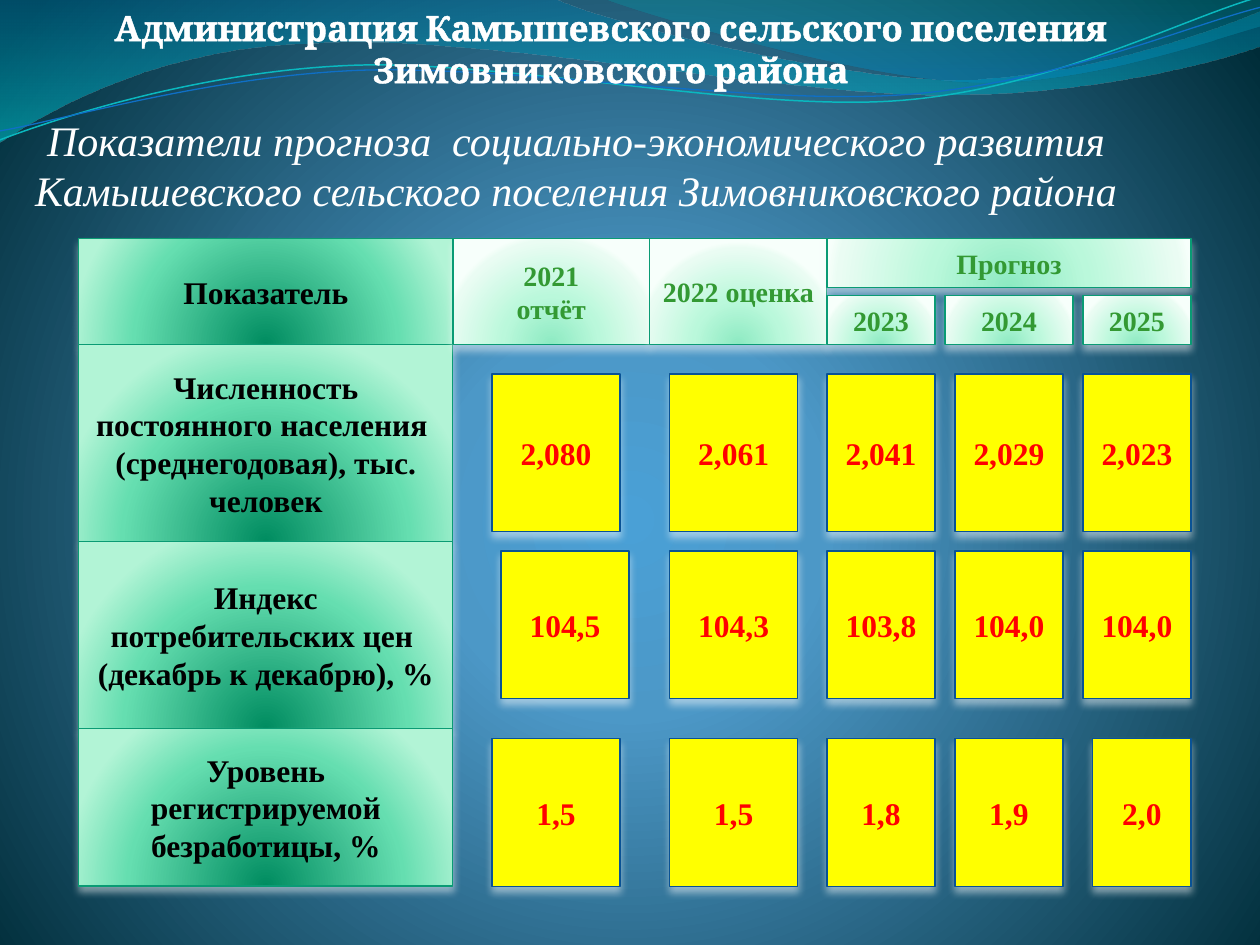
from lxml import etree
from pptx import Presentation
from pptx.dml.color import RGBColor
from pptx.enum import shapes, text
from pptx.oxml import ns
from pptx.util import Cm, Pt

WHITE = RGBColor(0xFF, 0xFF, 0xFF)
BLACK = RGBColor(0, 0, 0)
RED = RGBColor(0xFF, 0, 0)
YELLOW = RGBColor(0xFF, 0xFF, 0)
GREEN = RGBColor(0x33, 0x99, 0x33)
EDGE = RGBColor(0x0A, 0x9B, 0x74)
NAVY = RGBColor(0x09, 0x52, 0x95)
AQUA = RGBColor(0x0A, 0xB8, 0xBF)
BLUE = RGBColor(0x0F, 0x6F, 0xC6)
# Gradient stops: position, colour, opacity (all in percent)
SKY = [(0, RGBColor(0x4A, 0xA0, 0xD6), 100), (25, RGBColor(0x4C, 0x98, 0xC7), 100),
       (100, RGBColor(0, 0x2C, 0x38), 100)]
DEEP = [(0, RGBColor(0, 0x8C, 0x60), 100), (68, RGBColor(0x65, 0xDE, 0xB0), 100),
        (100, RGBColor(0xB2, 0xF4, 0xD6), 100)]
PALE = [(0, RGBColor(0x8D, 0xEA, 0xC2), 100), (43, RGBColor(0xBA, 0xF8, 0xDB), 100),
        (93, RGBColor(0xEA, 0xFC, 0xF3), 100), (100, RGBColor(0xF7, 0xFF, 0xFB), 100)]
SEA = [(0, RGBColor(0, 0x74, 0xA1), 45), (100, RGBColor(0, 0xC6, 0xCF), 55)]
FOAM = [(0, RGBColor(0, 0xA1, 0xA9), 30), (80, RGBColor(0, 0x8B, 0xBF), 45)]
SERIF = "Times New Roman"


def blend(props, stops, focus=None):
    """Swap the solid fill for a gradient, radial if a focus is given."""
    marks = "".join(
        f'<a:gs pos="{pos * 1000}"><a:srgbClr val="{tint}">'
        f'<a:alpha val="{part * 1000}"/></a:srgbClr></a:gs>'
        for pos, tint, part in stops)
    way = '<a:lin ang="5400000" scaled="0"/>'
    if focus:
        left, top, right, bottom = (n * 1000 for n in focus)
        way = (f'<a:path path="circle"><a:fillToRect l="{left}" t="{top}" '
               f'r="{right}" b="{bottom}"/></a:path>')
    grad = etree.fromstring(f'<a:gradFill {ns.nsdecls("a")} rotWithShape="1">'
                            f'<a:gsLst>{marks}</a:gsLst>{way}</a:gradFill>')
    props.replace(props.find(ns.qn("a:solidFill")), grad)


def box(x, y, w, h, words, fill, edge, size, ink):
    """Draw a bordered cell with a soft light shadow and bold centred text."""
    cell = slide.shapes.add_shape(shapes.MSO_SHAPE.RECTANGLE, Cm(x), Cm(y), Cm(w), Cm(h))
    cell.fill.solid()
    if isinstance(fill, list):
        blend(cell._element.spPr, fill, (50, 130, 50, -30))
    else:
        cell.fill.fore_color.rgb = fill
    cell.line.color.rgb = edge
    cell.line.width = Pt(0.75)
    cell._element.spPr.append(etree.fromstring(
        f'<a:effectLst {ns.nsdecls("a")}><a:outerShdw blurRad="{Pt(4.5)}" '
        f'dist="{Pt(3)}" dir="5400000" rotWithShape="0"><a:srgbClr val="{WHITE}">'
        '<a:alpha val="48000"/></a:srgbClr></a:outerShdw></a:effectLst>'))
    frame = cell.text_frame
    frame.text = words
    frame.word_wrap = True
    frame.vertical_anchor = text.MSO_ANCHOR.MIDDLE
    for par in frame.paragraphs:
        par.alignment = text.PP_ALIGN.CENTER
        par.font.name, par.font.size, par.font.bold = SERIF, Pt(size), True
        par.font.color.rgb = ink


deck = Presentation()
deck.slide_width, deck.slide_height = Cm(25.4), Cm(19.05)
slide = deck.slides.add_slide(deck.slide_layouts[5])

# Background
slide.background.fill.solid()
blend(slide.element.find(".//" + ns.qn("p:bgPr")), SKY, (10, 110, 10, 100))

# Waves: a start point, then lines (2 numbers) and Bezier curves (6 numbers), in cm
waves = [
    ([(0, 0), (11.18, -0.03), (12.09, 0.43, 16.87, 1.6, 19.25, 1.6),
      (21.67, 1.6, 24.33, 0.66, 25.4, 0.23), (25.43, 0.91),
      (24.97, 1.12, 22.1, 1.93, 18.95, 1.91), (15.8, 1.91, 9.7, 0.71, 6.53, 0.86),
      (3.28, 0.91, 1.17, 2.11, -0.03, 2.87)], SEA, None, 0),
    ([(12.17, -0.03), (12.93, 0.28, 17.32, 1.57, 19.53, 1.65),
      (21.74, 1.75, 24.41, 0.81, 25.4, 0.53), (25.4, 0)], FOAM, None, 0),
    ([(0, 2.82), (1.22, 2.36, 4.01, 1.45, 7.04, 1.32),
      (10.03, 1.19, 15.06, 2.26, 18.11, 2.03),
      (21.16, 1.8, 23.83, 0.38, 25.35, -0.05)], None, AQUA, 0.85),
    ([(0, 2.64), (1.19, 2.44, 4.17, 1.55, 7.19, 1.42),
      (10.24, 1.3, 15.16, 2.13, 18.21, 1.91),
      (21.23, 1.7, 23.9, 0.53, 25.4, 0.15)], None, BLUE, 0.75),
]
for (start, *parts), stops, tint, width in waves:
    pts = [(Cm(part[i]), Cm(part[i + 1])) for part in parts
           for i in range(0, len(part), 2)]
    path = slide.shapes.build_freeform(Cm(start[0]), Cm(start[1]))
    path.add_line_segments(pts, close=bool(stops))
    wave = path.convert_to_shape()
    # Join each three control points into one curve
    legs = iter(wave._element.findall(".//" + ns.qn("a:lnTo")))
    for part in parts:
        leg = next(legs)
        if len(part) == 6:
            leg.addprevious(curve := etree.Element(ns.qn("a:cubicBezTo")))
            for piece in (leg, next(legs), next(legs)):
                curve.append(piece[0])
                piece.getparent().remove(piece)
    wave.shadow.inherit = False
    if stops:
        wave.fill.solid()
        blend(wave._element.spPr, stops)
        wave.line.fill.background()
    else:
        wave.fill.background()
        wave.line.color.rgb = tint
        wave.line.width = Pt(width)

# Title and the name of the administration
title = slide.shapes.title
title.left, title.top, title.width, title.height = Cm(0), Cm(2.18), Cm(23.22), Cm(2.31)
title.text = ("Показатели прогноза  социально-экономического развития "
              "Камышевского сельского поселения Зимовниковского района")
owner = slide.shapes.add_textbox(Cm(0.7), Cm(0), Cm(23.22), Cm(1.96))
owner.text_frame.text = ("Администрация Камышевского сельского поселения "
                         "Зимовниковского района")
for shape, face, size in ((title, SERIF, 24), (owner, "Cambria", 20)):
    frame = shape.text_frame
    frame.word_wrap = True
    frame.auto_size = text.MSO_AUTO_SIZE.SHAPE_TO_FIT_TEXT
    frame.vertical_anchor = text.MSO_ANCHOR.TOP
    par = frame.paragraphs[0]
    par.alignment = text.PP_ALIGN.CENTER
    par.font.name, par.font.size = face, Pt(size)
    par.font.bold, par.font.italic = shape is owner, shape is title
    par.font.color.rgb = WHITE
rim = etree.fromstring(f'<a:ln {ns.nsdecls("a")} w="{Pt(1.45)}"><a:solidFill>'
                       f'<a:srgbClr val="{WHITE}"/></a:solidFill></a:ln>')
owner.text_frame.paragraphs[0].runs[0].font._element.insert(0, rim)

# Indicator names, stacked without gaps
y = 4.81
for words, h in (("Показатель", 2.14),
                 ("Численность постоянного населения \n(среднегодовая), тыс. человек", 3.97),
                 ("Индекс потребительских цен \n(декабрь к декабрю), %", 3.77),
                 ("Уровень регистрируемой безработицы, %", 3.17)):
    box(1.59, y, 7.54, h, words, DEEP, EDGE, 18, BLACK)
    y += h

# Period headings
for x, y, w, h, words in ((9.13, 4.81, 3.97, 2.14, "2021\nотчёт"),
                          (13.1, 4.81, 3.57, 2.14, "2022 оценка"),
                          (16.67, 4.81, 7.34, 0.99, "Прогноз"),
                          (16.67, 5.96, 2.18, 0.99, "2023"),
                          (19.05, 5.96, 2.58, 0.99, "2024"),
                          (21.83, 5.96, 2.18, 0.99, "2025")):
    box(x, y, w, h, words, PALE, EDGE, 16, GREEN)

# Values; two cells stand slightly off the grid
cols = [(9.92, 2.58), (13.5, 2.58), (16.67, 2.18), (19.25, 2.18), (21.83, 2.18)]
rows = [(7.54, 3.18, "2,080 2,061 2,041 2,029 2,023"),
        (11.11, 2.98, "104,5 104,3 103,8 104,0 104,0"),
        (14.89, 2.98, "1,5 1,5 1,8 1,9 2,0")]
odd = {"104,5": (10.1, 2.58), "2,0": (22.03, 1.98)}
for y, h, line in rows:
    for col, value in zip(cols, line.split()):
        x, w = odd.get(value, col)
        box(x, y, w, h, value, YELLOW, NAVY, 18, RED)

deck.save("out.pptx")
